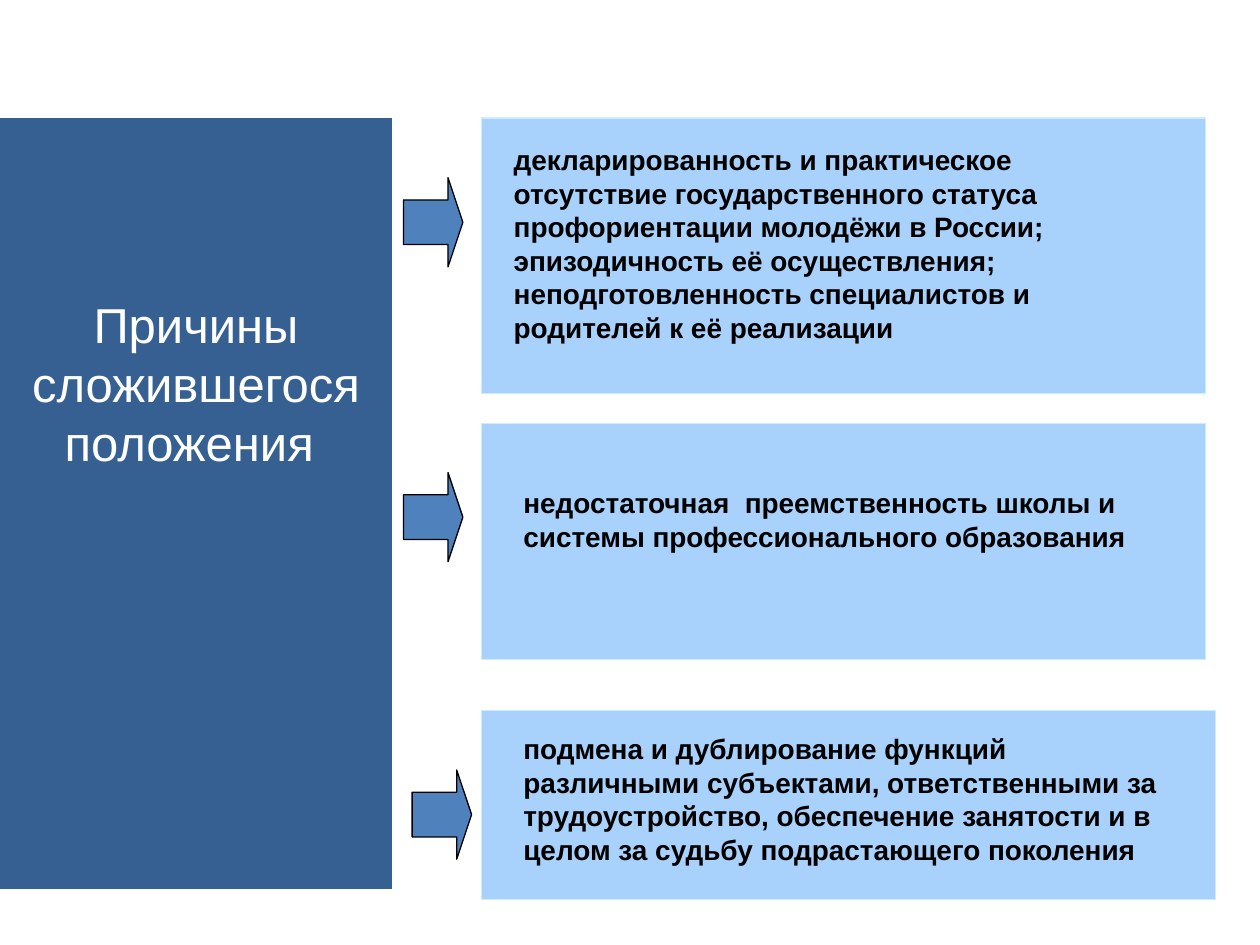
from pptx import Presentation
from pptx import util as u
from pptx.dml import color
from pptx.enum import shapes, text

HUES = {"panel": "376092", "arrow": "4F81BD", "card": "A8D2FC",
        "edge": "CCECFF", "ink": "000000", "white": "FFFFFF"}


class Deck:
    font = "Arial"

    def __init__(self, wide, high):
        self.prs = Presentation()
        self.prs.slide_width, self.prs.slide_height = u.Pt(wide), u.Pt(high)
        self.slide = self.prs.slides.add_slide(self.prs.slide_layouts[5])

    def hue(self, name):
        return color.RGBColor.from_string(HUES[name])

    def place(self, item, box):
        item.left, item.top, item.width, item.height = map(u.Pt, box)

    def fill(self, item, name):
        item.fill.solid()
        item.fill.fore_color.rgb = self.hue(name)

    def label(self, item, words, size, name, gap, bold=False):
        frame = item.text_frame
        frame.text = words
        frame.word_wrap = True
        frame.vertical_anchor = text.MSO_ANCHOR.TOP
        para = frame.paragraphs[0]
        para.space_before = u.Pt(gap)
        font = para.runs[0].font
        font.name, font.size, font.bold = self.font, u.Pt(size), bold
        font.color.rgb = self.hue(name)
        return frame

    def title(self, words, box, inset):
        item = self.slide.shapes.title
        self.place(item, box)
        self.fill(item, "panel")
        frame = self.label(item, words, 28, "white", 0)
        frame.auto_size = text.MSO_AUTO_SIZE.NONE
        frame.margin_top = u.Pt(inset)
        frame.paragraphs[0].alignment = text.PP_ALIGN.CENTER

    def shape(self, home, kind, box, fill, line):
        item = home.shapes.add_shape(kind, *map(u.Pt, box))
        item.shadow.inherit = False
        self.fill(item, fill)
        item.line.color.rgb = self.hue(line)
        item.line.width = u.Pt(0.75)
        return item

    def arrow(self, left, top):
        item = self.shape(self.slide, shapes.MSO_SHAPE.RIGHT_ARROW,
                          (left, top, 34, 51), "arrow", "ink")
        item.adjustments[0], item.adjustments[1] = 0.5, 0.25

    def card(self, words, box, area):
        group = self.slide.shapes.add_group_shape()
        self.shape(group, shapes.MSO_SHAPE.RECTANGLE, box, "card", "edge")
        note = group.shapes.add_textbox(*map(u.Pt, area))
        self.label(note, words, 16, "ink", 3.2, True)


CARDS = [
    ("декларированность и практическое отсутствие государственного статуса "
     "профориентации молодёжи в России; эпизодичность её осуществления; "
     "неподготовленность специалистов и родителей к её реализации",
     (275, 67.5, 414, 157.5), (286.5, 78, 380, 152.5), (230.5, 101.5)),
    ("недостаточная  преемственность школы и системы профессионального "
     "образования",
     (275, 242, 414, 135), (292, 274, 380, 47), (230.5, 270)),
    ("подмена и дублирование функций различными субъектами, ответственными за "
     "трудоустройство, обеспечение занятости и в целом за судьбу "
     "подрастающего поколения",
     (275, 406, 419.5, 108), (292, 414.5, 385, 85), (235.5, 440)),
]


def main():
    deck = Deck(720, 540)
    deck.title("Причины сложившегося положения ", (0, 67.5, 224, 440.5), 101)
    for words, box, area, spot in CARDS:
        deck.arrow(*spot)
        deck.card(words, box, area)
    deck.prs.save("out.pptx")


if __name__ == "__main__":
    main()
